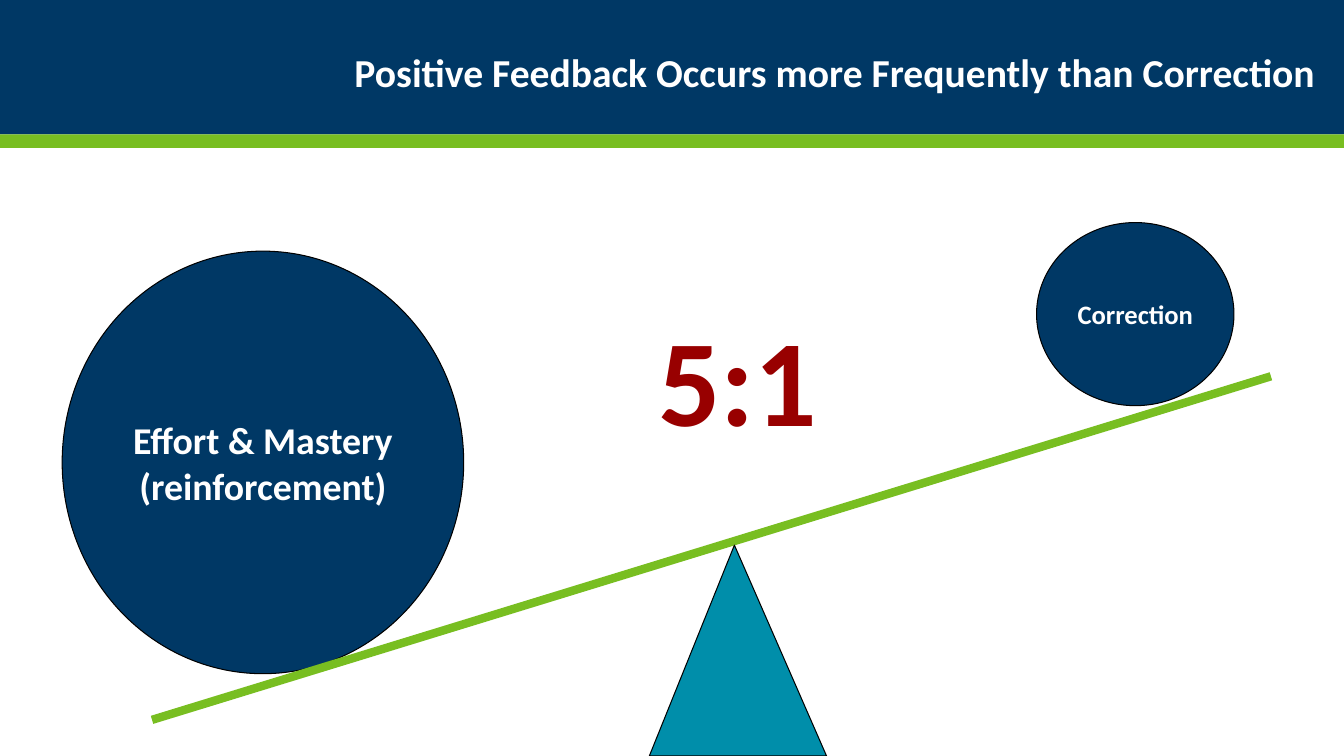
from lxml import etree
from pptx import Presentation, util as u
from pptx.dml.color import RGBColor
from pptx.enum import shapes, text
from pptx.oxml.ns import qn

NAVY, GREEN, TEAL = "003865", "78BE21", "008EAA"
WHITE, BLACK, RED = "FFFFFF", "000000", "980000"
COLUMNS, ROWS = 16, 9


def colour(value):
    return RGBColor.from_string(value)


def assign(target, values):
    for name, value in values.items():
        setattr(target, name, value)


class SlideBuilder:
    font = "Calibri"
    inset = u.Inches(0.1)

    def __init__(self, deck):
        self.column = deck.slide_width / COLUMNS
        self.row = deck.slide_height / ROWS
        self.page = deck.slides.add_slide(deck.slide_layouts[5])

    def place(self, left, top, width, height):
        return (round(left * self.column), round(top * self.row),
                round(width * self.column), round(height * self.row))

    def fill_text(self, box, lines, size, ink, align=text.PP_ALIGN.CENTER,
                  anchor=text.MSO_ANCHOR.MIDDLE, spacing=1.0, margin=inset):
        frame = box.text_frame
        assign(frame, {"word_wrap": True, "auto_size": text.MSO_AUTO_SIZE.NONE,
                       "vertical_anchor": anchor,
                       "margin_left": self.inset, "margin_right": self.inset,
                       "margin_top": margin, "margin_bottom": margin})
        for index, line in enumerate(lines):
            para = frame.add_paragraph() if index else frame.paragraphs[0]
            assign(para, {"alignment": align, "line_spacing": spacing})
            span = para.add_run()
            span.text = line
            assign(span.font, {"name": self.font, "size": u.Pt(size), "bold": True})
            span.font.color.rgb = colour(ink)

    def shape(self, kind, area, fill, outline=None):
        box = self.page.shapes.add_shape(kind, *self.place(*area))
        box.shadow.inherit = False
        box.fill.solid()
        box.fill.fore_color.rgb = colour(fill)
        if outline:
            box.line.color.rgb = colour(outline)
            box.line.width = u.Pt(0.75)
        else:
            box.line.fill.background()
        return box

    def title(self, area, line, size):
        box = self.page.shapes.title
        assign(box, dict(zip(("left", "top", "width", "height"), self.place(*area))))
        self.page.shapes._spTree.append(box._element)
        self.fill_text(box, [line], size, WHITE, align=text.PP_ALIGN.RIGHT,
                       spacing=0.9, margin=u.Inches(0.05))

    def ball(self, area, lines, size):
        box = self.shape(shapes.MSO_SHAPE.OVAL, area, NAVY, BLACK)
        self.fill_text(box, lines, size, WHITE)

    def label(self, area, line, size, ink):
        box = self.page.shapes.add_textbox(*self.place(*area))
        self.fill_text(box, [line], size, ink, anchor=text.MSO_ANCHOR.TOP)

    def beam(self, start, end, ink, width):
        ends = self.place(*start, *end)
        line = self.page.shapes.add_connector(shapes.MSO_CONNECTOR.STRAIGHT, *ends)
        line.line.color.rgb = colour(ink)
        line.line.width = u.Pt(width)
        etree.SubElement(line._element.spPr, qn("a:effectLst"))


def main():
    deck = Presentation()
    assign(deck, {"slide_width": u.Inches(13.33), "slide_height": u.Inches(7.5)})
    slide = SlideBuilder(deck)

    slide.shape(shapes.MSO_SHAPE.RECTANGLE, (0, 0, COLUMNS, 1.6), NAVY)
    slide.shape(shapes.MSO_SHAPE.RECTANGLE, (0, 1.6, COLUMNS, 0.16), GREEN)
    slide.title((3.96, 0.29, 11.83, 1.2),
                "Positive Feedback Occurs more Frequently than Correction", 28.3)

    slide.ball((0.74, 2.99, 4.78, 5.03), ["Effort & Mastery", "(reinforcement)"], 27)
    slide.beam((1.81, 8.57), (15.13, 4.48), GREEN, 6)
    slide.ball((12.34, 2.65, 2.35, 2.18), ["Correction"], 19)
    slide.label((7.22, 3.49, 3.12, 2.02), "5:1", 88, RED)
    pivot = slide.shape(shapes.MSO_SHAPE.ISOSCELES_TRIANGLE,
                        (7.73, 6.49, 2.11, 2.51), TEAL, BLACK)
    pivot.adjustments[0] = 0.48

    deck.save("out.pptx")


if __name__ == "__main__":
    main()
